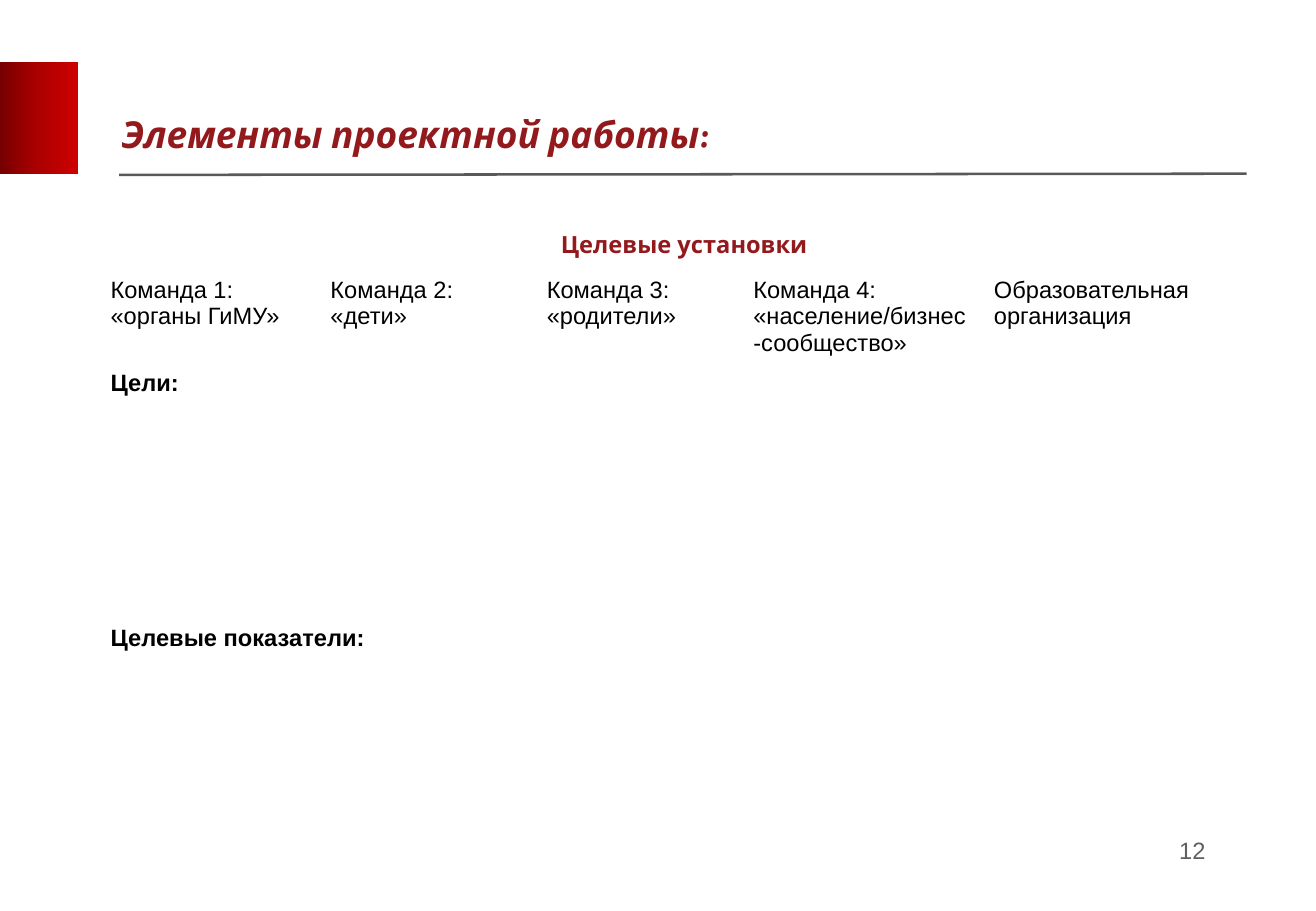
import copy
from dataclasses import dataclass

import pptx
import pptx.dml.color
import pptx.enum.shapes
import pptx.enum.text
import pptx.oxml.ns
import pptx.util
from pptx.util import Inches

ALIGN = pptx.enum.text.PP_ALIGN
RED = "921A1D"


@dataclass
class Style:
    size: float = 14
    font: str = "Arial"
    hue: str = "000000"
    bold: bool = False
    slant: bool = False
    align: ALIGN = ALIGN.LEFT


@dataclass
class Label:
    row: int
    col: int
    text: str
    style: Style
    span: int = 1


PLAIN = Style()
BOLD = Style(bold=True)
HEAD = Style(font="Karla", hue=RED, bold=True, align=ALIGN.CENTER)
TITLE = Style(22, "Karla", RED, True, True)
PAGE = Style(hue="606060", align=ALIGN.RIGHT)

TEAMS = ["Команда 1: «органы ГиМУ»", "Команда 2: «дети»",
         "Команда 3: «родители»",
         "Команда 4: «население/бизнес-сообщество»",
         "Образовательная организация"]
LABELS = [
    Label(0, 0, "Целевые установки", HEAD, 5),
    *(Label(1, col, team, PLAIN) for col, team in enumerate(TEAMS)),
    Label(2, 0, "Цели:", BOLD, 4),
    Label(7, 0, "Целевые показатели:", BOLD, 4),
]
WIDTHS = [1.81, 1.78, 1.7, 1.98, 2.37]
HEIGHTS = [0.33, 0.77] + [0.42] * 10


def color(code: str) -> pptx.dml.color.RGBColor:
    return pptx.dml.color.RGBColor.from_string(code)


def write(frame, text: str, style: Style) -> None:
    frame.text = text
    frame.word_wrap = True
    for para in frame.paragraphs:
        para.alignment = style.align
        for run in para.runs:
            font = run.font
            font.size = pptx.util.Pt(style.size)
            font.name = style.font
            font.bold = style.bold
            font.italic = style.slant
            font.color.rgb = color(style.hue)


def place(shape, left: float, top: float, width: float, height: float) -> None:
    shape.left, shape.top = Inches(left), Inches(top)
    shape.width, shape.height = Inches(width), Inches(height)


def add_block(slide) -> None:
    block = slide.shapes.add_shape(
        pptx.enum.shapes.MSO_SHAPE.RECTANGLE,
        0, Inches(0.51), Inches(0.64), Inches(0.92))
    block.shadow.inherit = False
    block.line.fill.background()
    block.fill.gradient()
    block.fill.gradient_angle = 0
    stops = block._element.find(".//" + pptx.oxml.ns.qn("a:gsLst"))
    stops.append(copy.deepcopy(stops[-1]))
    shades = [(0, "770000"), (0.5, "AD0000"), (1, "CE0000")]
    for stop, (pos, hue) in zip(block.fill.gradient_stops, shades):
        stop.position = pos
        stop.color.rgb = color(hue)


def add_rule(slide) -> None:
    rule = slide.shapes.add_connector(
        pptx.enum.shapes.MSO_CONNECTOR.STRAIGHT,
        Inches(0.98), Inches(1.44), Inches(10.26), Inches(1.43))
    rule.line.color.rgb = color("595959")
    rule.line.width = pptx.util.Pt(1.5)
    rule._element.spPr.append(pptx.oxml.parse_xml(
        f'<a:effectLst {pptx.oxml.ns.nsdecls("a")}/>'))


def add_grid(slide) -> None:
    grid = slide.shapes.add_table(
        len(HEIGHTS), len(WIDTHS), Inches(0.81), Inches(1.9),
        Inches(sum(WIDTHS)), Inches(sum(HEIGHTS))).table
    grid.first_row = grid.horz_banding = False
    for col, width in zip(grid.columns, WIDTHS):
        col.width = Inches(width)
    for row, height in zip(grid.rows, HEIGHTS):
        row.height = Inches(height)
    for cell in grid.iter_cells():
        cell.fill.background()
    for item in LABELS:
        cell = grid.cell(item.row, item.col)
        if item.span > 1:
            cell.merge(grid.cell(item.row, item.col + item.span - 1))
        write(cell.text_frame, item.text, item.style)
    grid.cell(0, 0).margin_top = Inches(0.01)


def main() -> None:
    deck = pptx.Presentation()
    deck.slide_width, deck.slide_height = Inches(10.83), Inches(7.5)
    slide = deck.slides.add_slide(deck.slide_layouts[5])

    # Heading with its red block and rule
    add_block(slide)
    title = slide.shapes.title
    place(title, 0.9, 0.87, 9.6, 0.47)
    write(title.text_frame, "Элементы проектной работы:", TITLE)
    title.text_frame.vertical_anchor = pptx.enum.text.MSO_ANCHOR.TOP
    title.text_frame.auto_size = pptx.enum.text.MSO_AUTO_SIZE.NONE
    add_rule(slide)

    # Goals by team
    add_grid(slide)

    # Page number
    page = slide.shapes.add_textbox(0, 0, 0, 0)
    place(page, 7.76, 6.83, 2.26, 0.5)
    write(page.text_frame, "12", PAGE)

    deck.save("out.pptx")


if __name__ == "__main__":
    main()
